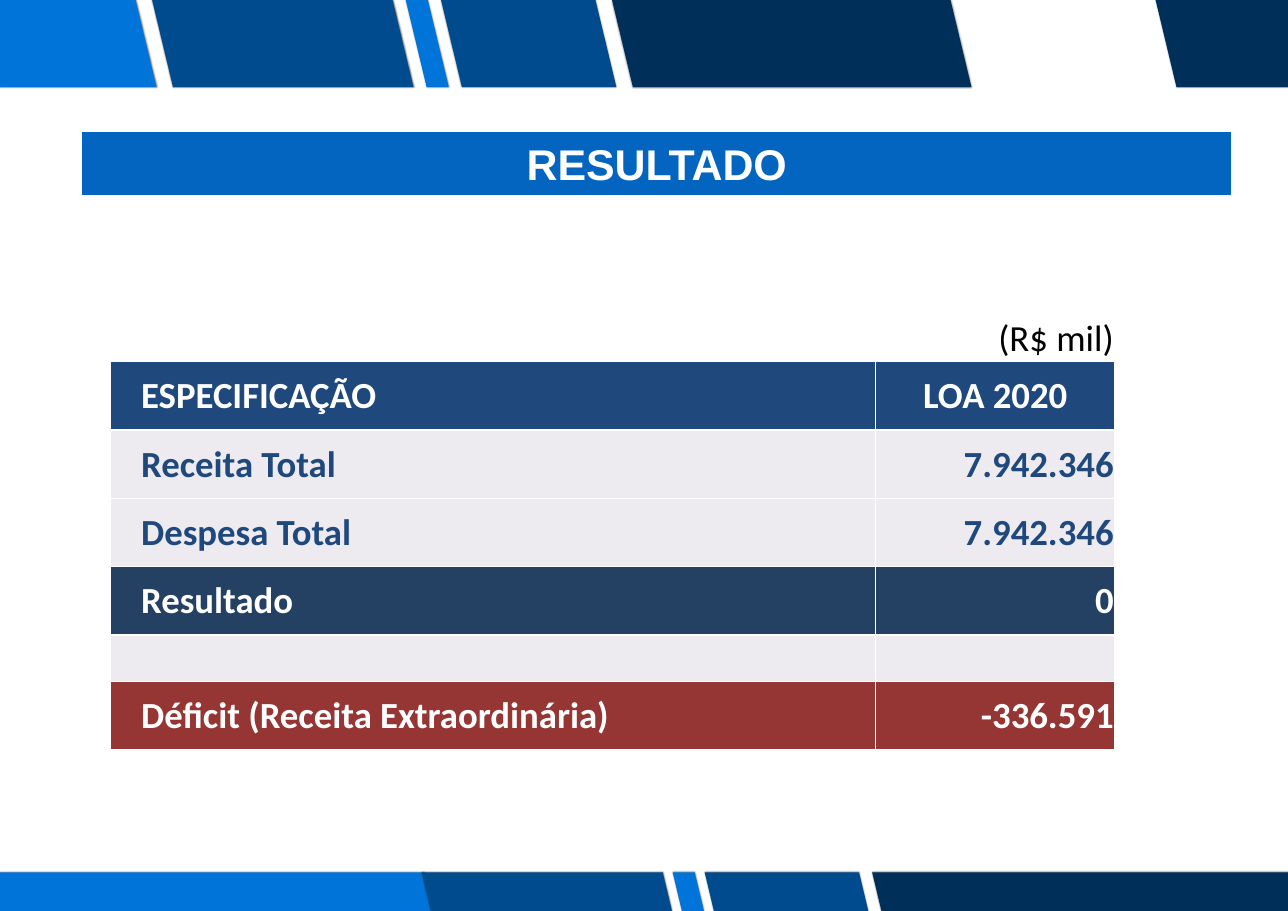
from dataclasses import dataclass

import lxml.etree
import pptx
import pptx.dml.color
import pptx.enum.text
import pptx.oxml
import pptx.oxml.ns
import pptx.util

WIDTH, HEIGHT = 11.68, 8.26
SLANT = 0.24  # sideways shift of a band edge per unit of height
ALIGN = pptx.enum.text.PP_ALIGN
ANCHOR = pptx.enum.text.MSO_ANCHOR


@dataclass(frozen=True)
class Theme:
    bright: str = "0074D9"
    medium: str = "004B8D"
    deep: str = "00305A"
    banner: str = "0365C0"
    header: str = "1F497D"
    light: str = "EDEAF0"
    total: str = "244062"
    deficit: str = "963634"
    white: str = "FFFFFF"
    black: str = "000000"
    title_font: str = "Arial"
    table_font: str = "Calibri"
    title_size: int = 28
    table_size: int = 24


THEME = Theme()

# Bands: left and right end of the top edge, colour
TOP_BANDS = [
    (-0.3, 1.23, THEME.bright), (1.38, 3.56, THEME.medium),
    (3.68, 3.88, THEME.bright), (4.0, 5.4, THEME.medium),
    (5.55, 8.62, THEME.deep), (10.48, 11.7, THEME.deep),
]
BOTTOM_BANDS = [
    (-0.3, 3.84, THEME.bright), (3.83, 6.01, THEME.medium),
    (6.1, 6.3, THEME.bright), (6.39, 7.79, THEME.medium),
    (7.91, 11.7, THEME.deep),
]

# Rows: label, value, fill, text colour, height
ROWS = [
    ("", "(R$ mil)", None, THEME.black, 0.44),
    ("ESPECIFICAÇÃO", "LOA 2020", THEME.header, THEME.white, 0.62),
    ("Receita Total", "7.942.346", THEME.light, THEME.header, 0.62),
    ("Despesa Total", "7.942.346", THEME.light, THEME.header, 0.62),
    ("Resultado", "0", THEME.total, THEME.white, 0.62),
    ("", "", THEME.light, THEME.header, 0.42),
    ("Déficit (Receita Extraordinária)", "-336.591", THEME.deficit,
     THEME.white, 0.62),
]


def inches(value):
    return pptx.util.Inches(value)


def paint(fill, colour):
    fill.solid()
    fill.fore_color.rgb = pptx.dml.color.RGBColor.from_string(colour)


def format_text(paragraph, font_name, size, colour, bold, alignment):
    paragraph.alignment = alignment
    for run in paragraph.runs:
        run.font.name = font_name
        run.font.size = pptx.util.Pt(size)
        run.font.bold = bold
        run.font.color.rgb = pptx.dml.color.RGBColor.from_string(colour)


def add_soft_edge(shape):
    shape._element.spPr.append(pptx.oxml.parse_xml(
        f'<a:effectLst {pptx.oxml.ns.nsdecls("a")}>'
        '<a:outerShdw blurRad="12700" dist="0" dir="5400000">'
        f'<a:srgbClr val="{THEME.black}"><a:alpha val="50000"/></a:srgbClr>'
        '</a:outerShdw></a:effectLst>'))


def add_bands(slide, bands, top, height):
    """Row of slanted bands, cut at the slide's sides."""
    shift = SLANT * height
    for left, right, colour in bands:
        corners = [(left, top), (right, top),
                   (right + shift, top + height), (left + shift, top + height)]
        points = [(inches(min(max(x, 0), WIDTH)), inches(y)) for x, y in corners]
        builder = slide.shapes.build_freeform(*points[0])
        builder.add_line_segments(points[1:], close=True)
        band = builder.convert_to_shape()
        paint(band.fill, colour)
        band.line.fill.background()
        add_soft_edge(band)


def add_banner(slide, left, top, width, height):
    """Slide title on a rounded bar."""
    title = slide.shapes.title
    title.left, title.top = inches(left), inches(top)
    title.width, title.height = inches(width), inches(height)
    title._element.spPr.append(pptx.oxml.parse_xml(
        f'<a:prstGeom {pptx.oxml.ns.nsdecls("a")} prst="roundRect">'
        '<a:avLst/></a:prstGeom>'))
    paint(title.fill, THEME.banner)
    paint(title.line.fill, THEME.white)
    title.line.width = pptx.util.Pt(2)
    frame = title.text_frame
    frame.text = "RESULTADO"
    frame.vertical_anchor = ANCHOR.MIDDLE
    format_text(frame.paragraphs[0], THEME.title_font, THEME.title_size,
                THEME.white, True, ALIGN.CENTER)


def add_borders(cell):
    properties = cell._tc.get_or_add_tcPr()
    for index, side in enumerate(("lnL", "lnR", "lnT", "lnB")):
        properties.insert(index, pptx.oxml.parse_xml(
            f'<a:{side} {pptx.oxml.ns.nsdecls("a")} w="12700"><a:solidFill>'
            f'<a:srgbClr val="{THEME.white}"/></a:solidFill></a:{side}>'))


def add_result_table(slide, left, top, width):
    """Budget table; the first row carries the unit."""
    total_height = sum(row[-1] for row in ROWS)
    table = slide.shapes.add_table(len(ROWS), 2, inches(left), inches(top),
                                   inches(width), inches(total_height)).table
    table.first_row = table.horz_banding = False
    value_width = 2.17
    table.columns[0].width = inches(width - value_width)
    table.columns[1].width = inches(value_width)
    for index, (label, value, colour, text_colour, height) in enumerate(ROWS):
        table.rows[index].height = inches(height)
        value_alignment = ALIGN.CENTER if index == 1 else ALIGN.RIGHT
        for column, text, alignment, inset in (
                (0, label, ALIGN.LEFT, 0.28), (1, value, value_alignment, 0.01)):
            cell = table.cell(index, column)
            cell.margin_left = inches(inset)
            cell.margin_right = cell.margin_top = inches(0.01)
            cell.margin_bottom = 0
            cell.vertical_anchor = ANCHOR.MIDDLE if index else ANCHOR.BOTTOM
            if colour:
                paint(cell.fill, colour)
            else:
                cell.fill.background()
            add_borders(cell)
            if text:
                cell.text_frame.text = text
                format_text(cell.text_frame.paragraphs[0], THEME.table_font,
                            THEME.table_size, text_colour, index > 0, alignment)


def main():
    presentation = pptx.Presentation()
    presentation.slide_width = inches(WIDTH)
    presentation.slide_height = inches(HEIGHT)
    slide = presentation.slides.add_slide(
        presentation.slide_layouts.get_by_name("Title Only"))
    add_bands(slide, TOP_BANDS, 0, 0.79)
    add_bands(slide, BOTTOM_BANDS, 7.91, HEIGHT - 7.91)
    add_banner(slide, 0.73, 1.18, 10.45, 0.6)
    add_result_table(slide, 1, 2.84, 9.11)
    presentation.save("out.pptx")


if __name__ == "__main__":
    main()
